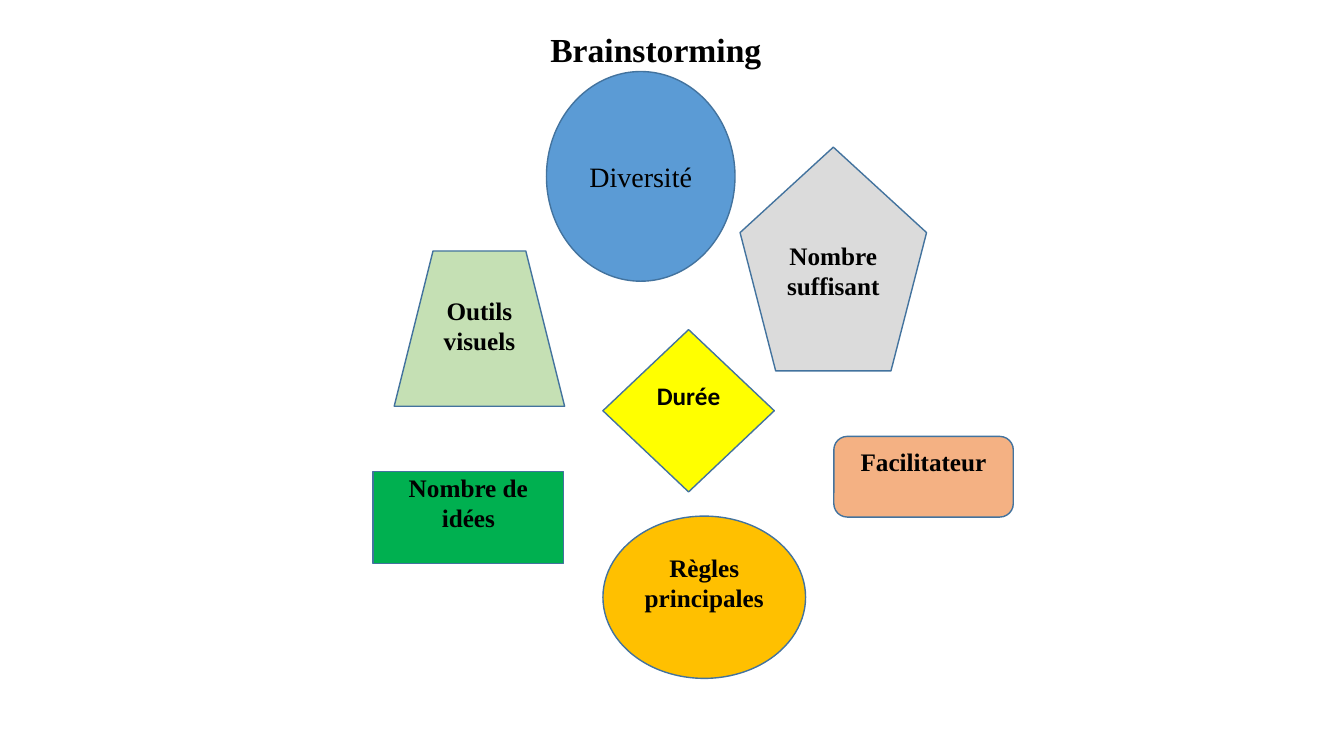
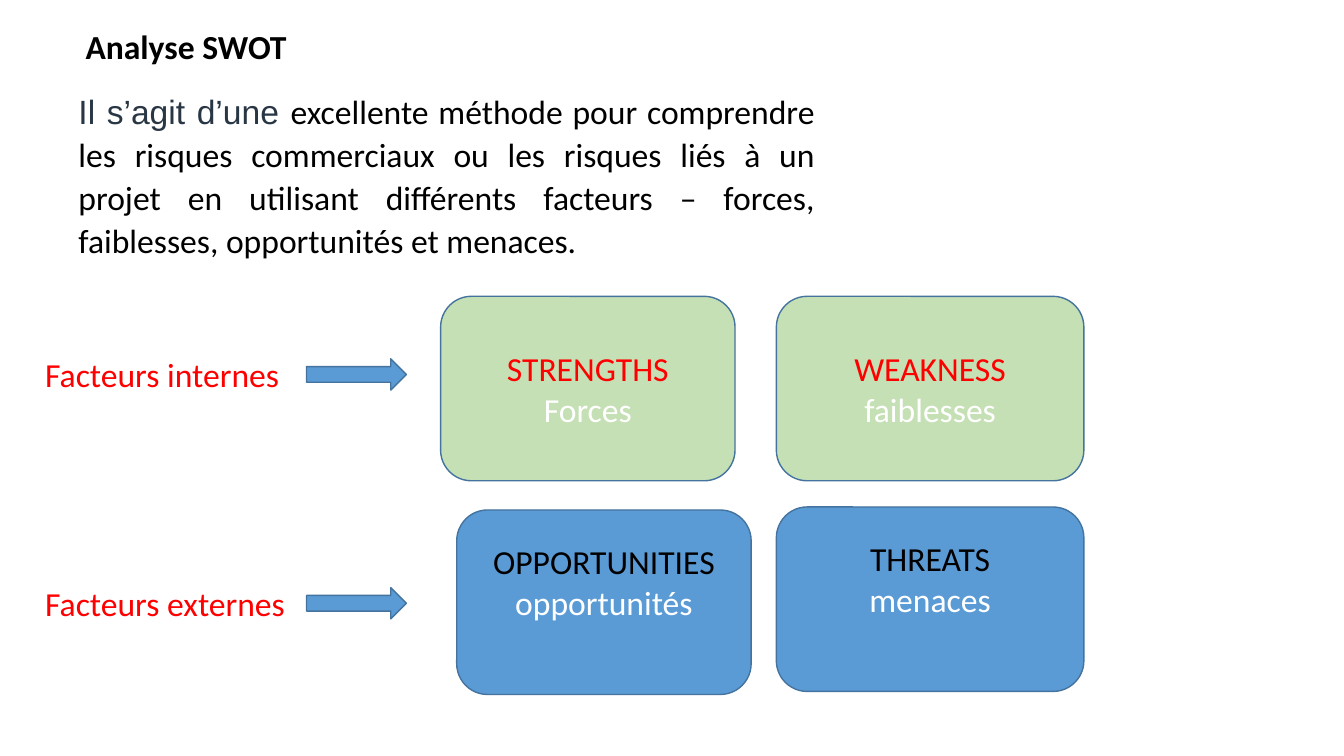
from dataclasses import dataclass

from pptx import Presentation
from pptx import util as u
from pptx.dml.color import RGBColor
from pptx.enum import shapes, text

PX = 9144
KIND = shapes.MSO_SHAPE
ALIGN = text.PP_ALIGN


@dataclass(frozen=True)
class Theme:
    serif: str = "Times New Roman"
    sans: str = "Calibri"
    lead: str = "Arial"
    title: int = 24
    body: int = 24
    accent: int = 20
    label: int = 18
    black: str = "000000"
    white: str = "FFFFFF"
    red: str = "FF0000"
    slate: str = "293745"
    outline: str = "43739E"
    blue: str = "5B9BD5"
    yellow: str = "FFFF00"
    sage: str = "C5E0B4"
    green: str = "00B050"
    peach: str = "F4B183"
    gold: str = "FFC000"
    grey: str = "DBDBDB"


T = Theme()


def add_box(s, at, kind=None, fill=None, below=0):
    at = [v * PX for v in at]
    if kind is None:
        sp = s.shapes.add_textbox(*at)
        sp.text_frame.auto_size = text.MSO_AUTO_SIZE.SHAPE_TO_FIT_TEXT
    else:
        sp = s.shapes.add_shape(kind, *at)
        sp.shadow.inherit = False
        sp.fill.solid()
        sp.fill.fore_color.rgb = RGBColor.from_string(fill)
        sp.line.color.rgb = RGBColor.from_string(T.outline)
        sp.line.width = u.Pt(1)
        sp.text_frame.vertical_anchor = text.MSO_ANCHOR.MIDDLE
        sp.text_frame.margin_bottom = (5 + below) * PX
    sp.text_frame.word_wrap = True
    return sp.text_frame


def write(tf, lines, size, font, bold=False, align=ALIGN.CENTER):
    for i, (words, color) in enumerate(lines):
        p = tf.add_paragraph() if i else tf.paragraphs[0]
        p.alignment = align
        p.font.size = u.Pt(size)
        p.font.name = font
        p.font.bold = bold
        p.font.color.rgb = RGBColor.from_string(color)
        p.add_run().text = words


prs = Presentation()
prs.slide_width, prs.slide_height = 1333 * PX, 750 * PX
blank = prs.slide_layouts[6]
brainstorm, swot = [prs.slides.add_slide(blank) for _ in range(2)]

for s, title, at, font in [
    (brainstorm, "Brainstorming", (536, 24, 231, 50), T.serif),
    (swot, "Analyse SWOT", (75, 21, 229, 50), T.sans),
]:
    tf = add_box(s, at)
    tf.word_wrap = False
    write(tf, [(title, T.black)], T.title, font, True, ALIGN.LEFT)

tf = add_box(brainstorm, (542, 71, 187, 208), KIND.OVAL, T.blue)
write(tf, [("Diversité", T.black)], T.accent, T.serif)

for words, kind, at, fill, font in [
    ("Durée", KIND.DIAMOND, (598, 327, 170, 161), T.yellow, T.sans),
    ("Outils visuels", KIND.TRAPEZOID, (391, 249, 169, 154), T.sage, T.serif),
    ("Nombre de idées", KIND.RECTANGLE, (370, 468, 189, 91), T.green, T.serif),
    ("Facilitateur", KIND.ROUNDED_RECTANGLE, (827, 433, 178, 80), T.peach, T.serif),
    ("Règles principales", KIND.OVAL, (598, 512, 201, 161), T.gold, T.serif),
    ("Nombre suffisant", KIND.REGULAR_PENTAGON, (734, 146, 185, 222), T.grey, T.serif),
]:
    tf = add_box(brainstorm, at, kind, fill, below=30)
    write(tf, [(words, T.black)], T.label, font, True)

for heading, meaning, at, fill, color, below in [
    ("THREATS", "menaces", (770, 503, 305, 183), T.blue, T.black, 41),
    ("WEAKNESS", "faiblesses", (770, 294, 305, 183), T.sage, T.red, 0),
    ("STRENGTHS", "Forces", (437, 294, 292, 183), T.sage, T.red, 0),
    ("OPPORTUNITIES", "opportunités", (453, 506, 292, 183), T.blue, T.black, 41),
]:
    tf = add_box(swot, at, KIND.ROUNDED_RECTANGLE, fill, below)
    write(tf, [(heading, color), (meaning, T.white)], T.body, T.sans)

for words, top in [("Facteurs internes", 346), ("Facteurs externes", 573)]:
    tf = add_box(swot, (35, top, 277, 50))
    write(tf, [(words, T.red)], T.body, T.sans, align=ALIGN.LEFT)
    add_box(swot, (304, top + 10, 99, 31), KIND.RIGHT_ARROW, T.blue)

p = add_box(swot, (68, 82, 750, 183)).paragraphs[0]
p.alignment = ALIGN.JUSTIFY
p.line_spacing = 1.07
p.space_after = u.Pt(8)
p.font.size = u.Pt(T.body)
for words, font, color in [
    ("Il s’agit d’une ", T.lead, T.slate),
    (
        "excellente méthode pour comprendre les risques commerciaux ou les risques "
        "liés à un projet en utilisant différents facteurs – forces, faiblesses, "
        "opportunités et menaces.",
        T.sans,
        T.black,
    ),
]:
    r = p.add_run()
    r.text = words
    r.font.name = font
    r.font.color.rgb = RGBColor.from_string(color)

prs.save("out.pptx")
